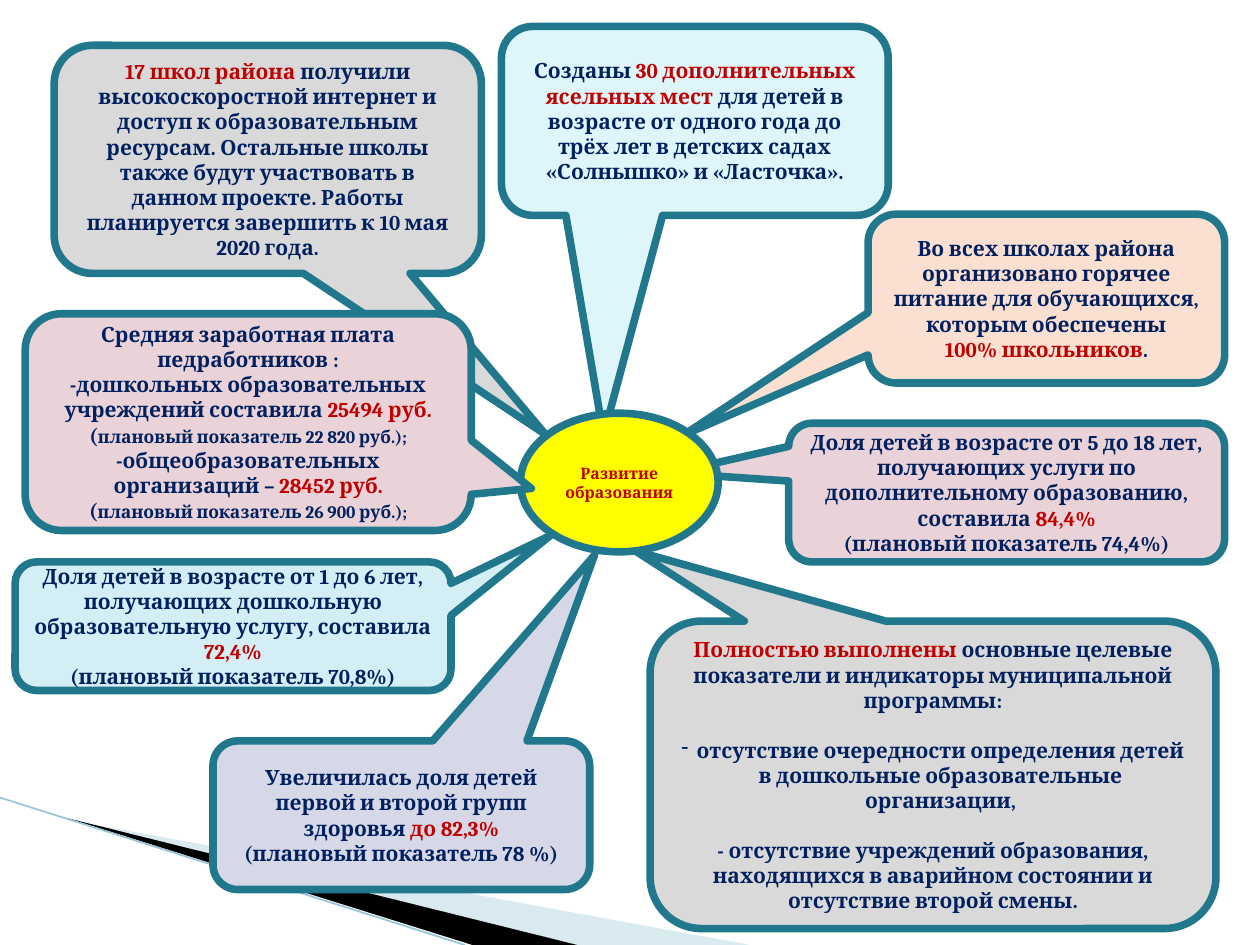
import lxml.etree
import pptx
import pptx.dml.color
import pptx.enum.shapes
import pptx.enum.text
import pptx.oxml.ns
import pptx.util

SHAPES = pptx.enum.shapes.MSO_SHAPE
CELL = pptx.util.Inches(0.1)  # the slide is a grid of 100 columns by 75 rows
COLORS = {
    "outline": "21788D", "navy": "002060", "red": "C00000", "yellow": "FFFF00",
    "gray": "D9D9D9", "ice": "DEF5FA", "peach": "FBE0D1", "aqua": "D3EEF5",
    "lavender": "D7D8E7", "rose": "EAD3D8",
    "sweep": "A0CBDC", "black": "000000", "thin": "97C5D8",
}

# Each callout: box and fill, pointer tip, paragraphs as (text, options).
# Words between asterisks are highlighted in red.
INTERNET = ((4.3, 3.6, 33.9, 18.1), "gray", (0.65, 1.206), [
    ("*17 школ района* получили высокоскоростной интернет и доступ к "
     "образовательным ресурсам. Остальные школы также будут участвовать в "
     "данном проекте. Работы планируется завершить к 10 мая 2020 года.", {})])
NURSERY = ((39.8, 2.1, 30.7, 15), "ice", (-0.236, 1.664), [
    ("Созданы *30 дополнительных ясельных мест* для детей в возрасте от одного "
     "года до трёх лет в детских садах «Солнышко» и «Ласточка».", {})])
MEALS = ((68.9, 17, 28.3, 13.4), "peach", (-1.018, 0.809), [
    ("Во всех школах района организовано горячее питание для обучающихся, "
     "которым обеспечены", {}),
    ("*100% школьников*.", {})])
PRESCHOOL = ((1.2, 44.6, 34.6, 10.2), "aqua", (0.728, -0.706), [
    ("Доля детей в возрасте от 1 до 6 лет, получающих дошкольную "
     "образовательную услугу, составила *72,4%*", {}),
    ("(плановый показатель 70,8%)", {})])
HEALTH = ((16.9, 58.8, 29.9, 11.8), "lavender", (0.513, -1.75), [
    ("Увеличилась доля детей первой и второй групп здоровья *до 82,3%*", {}),
    ("(плановый показатель 78 %)", {})])
TARGETS = ((51.6, 49.3, 44.9, 24.4), "gray", (-0.526, -0.728), [
    ("*Полностью выполнены* основные целевые показатели и индикаторы "
     "муниципальной программы:", {}),
    ("отсутствие очередности определения детей в дошкольные образовательные "
     "организации,", {"gap": 14, "bullet": "-"}),
    ("- отсутствие учреждений образования, находящихся в аварийном состоянии и "
     "отсутствие второй смены.", {"gap": 14})])
EXTRA_CLASSES = ((62.6, 33.6, 34.6, 11), "rose", (-0.769, -0.141), [
    ("Доля детей в возрасте от 5 до 18 лет, получающих услуги по "
     "дополнительному образованию, составила *84,4%*", {}),
    ("(плановый показатель 74,4%)", {})])
SALARY = ((2, 24.9, 35.4, 17.2), "rose", (0.635, 0.306), [
    ("Средняя заработная плата педработников :", {}),
    ("-дошкольных образовательных учреждений составила *25494 руб.*", {}),
    ("(|плановый показатель 22 820 руб.);", {}),
    ("-общеобразовательных организаций – *28452 руб.*", {}),
    ("(|плановый показатель 26 900 руб.);", {})])


def rgb(name):
    return pptx.dml.color.RGBColor.from_string(COLORS[name])


def cells(*counts):
    return [round(count * CELL) for count in counts]


def add_bullet(paragraph, mark):
    properties = paragraph._p.get_or_add_pPr()
    hang = round(1.2 * CELL)
    properties.set("marL", str(hang))
    properties.set("indent", str(-hang))
    bullet = lxml.etree.SubElement(properties, pptx.oxml.ns.qn("a:buChar"))
    bullet.set("char", mark)


def write_paragraph(paragraph, text, size, gap=0, bullet=None):
    """Asterisks switch red on and off; a bar starts smaller type."""
    if bullet:
        add_bullet(paragraph, bullet)
    paragraph.alignment = pptx.enum.text.PP_ALIGN.CENTER
    if gap:
        paragraph.space_before = pptx.util.Pt(gap)
    paragraph.font.name = "Cambria"
    paragraph.font.bold = True
    paragraph.font.size = pptx.util.Pt(size)
    for position, part in enumerate(text.split("*")):
        for level, words in enumerate(part.split("|")):
            if words:
                run = paragraph.add_run()
                run.text = words
                run.font.color.rgb = rgb("red" if position % 2 else "navy")
                if level:
                    run.font.size = pptx.util.Pt(10)


def add_bubble(slide, kind, box, fill, paragraphs, size=12):
    bubble = slide.shapes.add_shape(kind, *cells(*box))
    bubble.shadow.inherit = False
    bubble.fill.solid()
    bubble.fill.fore_color.rgb = rgb(fill)
    bubble.line.color.rgb = rgb("outline")
    bubble.line.width = pptx.util.Pt(4.33)
    frame = bubble.text_frame
    frame.word_wrap = True
    frame.vertical_anchor = pptx.enum.text.MSO_ANCHOR.MIDDLE
    for index, (text, options) in enumerate(paragraphs):
        paragraph = frame.add_paragraph() if index else frame.paragraphs[0]
        write_paragraph(paragraph, text, size, **options)
    return bubble


def add_callout(slide, box, fill, tip, paragraphs):
    callout = add_bubble(slide, SHAPES.ROUNDED_RECTANGULAR_CALLOUT,
                         box, fill, paragraphs)
    for index, value in enumerate((*tip, 0.167)):
        callout.adjustments[index] = value


def add_sweep(slide, box):
    """Corner decoration: two wedges and a thin line, as shares of the box."""
    left, top, width, height = box

    def spot(across, down):
        return cells(left + across * width, top + down * height)

    wedges = [("sweep", 40, [(0.09, 0.15), (1, 1), (0.77, 1)]),
              ("black", 100, [(0.09, 0.14), (0.77, 1), (0.63, 1)])]
    for color, opacity, corners in wedges:
        start, *others = [spot(*corner) for corner in corners]
        outline = slide.shapes.build_freeform(*start)
        outline.add_line_segments(others)
        wedge = outline.convert_to_shape()
        wedge.shadow.inherit = False
        wedge.fill.solid()
        wedge.fill.fore_color.rgb = rgb(color)
        wedge.line.fill.background()
        if opacity < 100:
            tint = wedge.fill._xPr.find(".//" + pptx.oxml.ns.qn("a:srgbClr"))
            alpha = lxml.etree.SubElement(tint, pptx.oxml.ns.qn("a:alpha"))
            alpha.set("val", str(opacity * 1000))

    edge = slide.shapes.add_connector(
        pptx.enum.shapes.MSO_CONNECTOR.STRAIGHT, *spot(0, 0), *spot(0.62, 1))
    edge.line.color.rgb = rgb("thin")
    edge.line.width = pptx.util.Pt(0.95)
    lxml.etree.SubElement(edge._element.spPr, pptx.oxml.ns.qn("a:effectLst"))


def main():
    deck = pptx.Presentation()
    deck.slide_width, deck.slide_height = cells(100, 75)
    slide = deck.slides.add_slide(deck.slide_layouts[6])

    add_sweep(slide, (0, 63.3, 59.5, 11.7))
    for callout in (INTERNET, NURSERY, MEALS, PRESCHOOL, HEALTH, TARGETS,
                    EXTRA_CLASSES):
        add_callout(slide, *callout)
    # The hub lies over the other pointers and under the salary pointer
    add_bubble(slide, SHAPES.OVAL, (41.3, 32.8, 15.7, 11), "yellow",
               [("*Развитие образования*", {})], size=9)
    add_callout(slide, *SALARY)

    deck.save("out.pptx")


if __name__ == "__main__":
    main()
